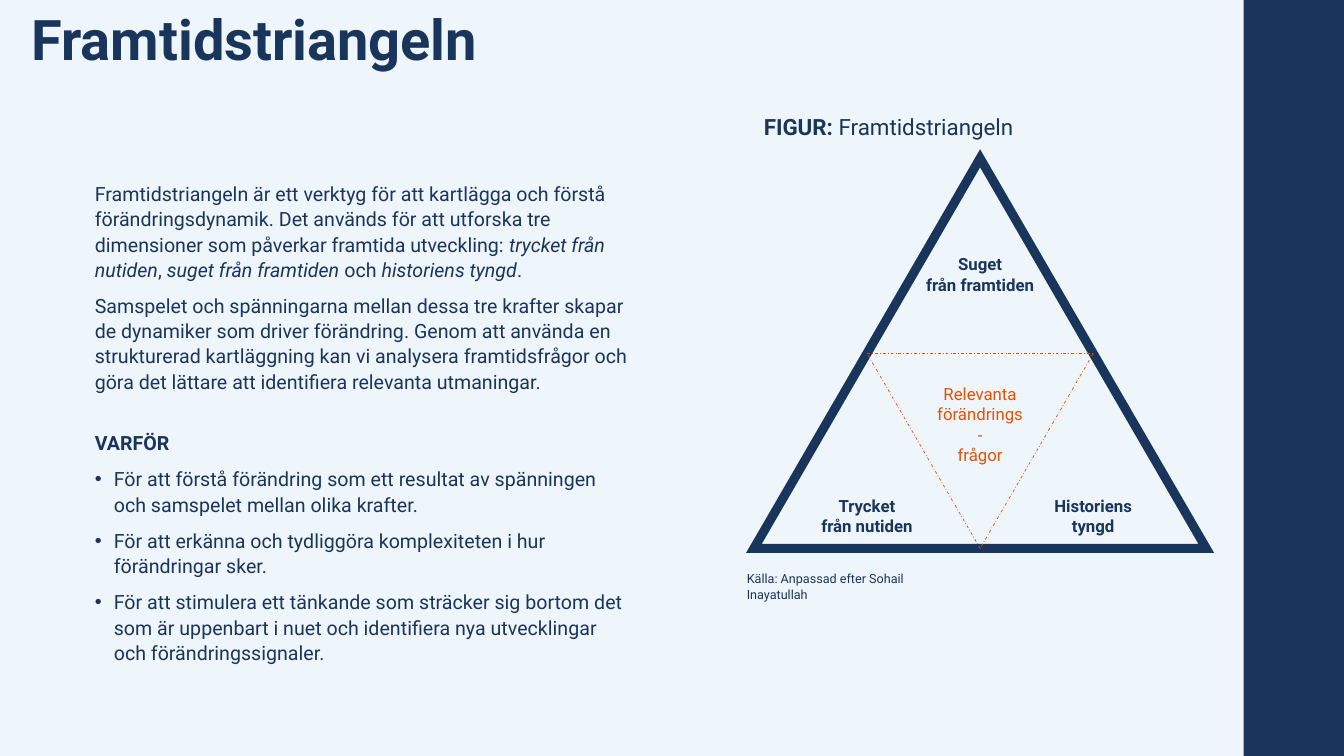
import dataclasses

import lxml.etree
import pptx
import pptx.dml.color
import pptx.enum.dml
import pptx.enum.shapes
import pptx.enum.text
import pptx.oxml.ns
import pptx.util

Cm = pptx.util.Cm
Pt = pptx.util.Pt
SHAPES = pptx.enum.shapes.MSO_SHAPE
ALIGN = pptx.enum.text.PP_ALIGN
qn = pptx.oxml.ns.qn


@dataclasses.dataclass(frozen=True)
class Theme:
    face: str = "Roboto"
    navy: str = "1A355C"
    pale: str = "EEF5FB"
    orange: str = "E35205"
    title: int = 40
    head: int = 16
    body: int = 14
    label: int = 12
    note: int = 9


THEME = Theme()

INTRO = [
    ("Framtidstriangeln är ett verktyg för att kartlägga och förstå förändringsdynamik. "
     "Det används för att utforska tre dimensioner som påverkar framtida utveckling: ", {}),
    ("trycket från nutiden", {"italic": True}),
    (", ", {}),
    ("suget från framtiden ", {"italic": True}),
    ("och ", {}),
    ("historiens tyngd", {"italic": True}),
    (".", {}),
]
FORCES = (
    "Samspelet och spänningarna mellan dessa tre krafter skapar de dynamiker som driver "
    "förändring. Genom att använda en strukturerad kartläggning kan vi analysera "
    "framtidsfrågor och göra det lättare att identifiera relevanta utmaningar."
)
REASONS = [
    "För att förstå förändring som ett resultat av spänningen och samspelet mellan olika krafter.",
    "För att erkänna och tydliggöra komplexiteten i hur förändringar sker.",
    "För att stimulera ett tänkande som sträcker sig bortom det som är uppenbart i nuet "
    "och identifiera nya utvecklingar och förändringssignaler.",
]
LABELS = [
    (0.5, 2.29, 3.3, ["Suget", "från framtiden"], THEME.navy, True),
    (0.25, 8.38, 2.87, ["Trycket", "från nutiden"], THEME.navy, True),
    (0.75, 8.38, 2.59, ["Historiens", "tyngd"], THEME.navy, True),
    (0.5, 5.56, 2.74, ["Relevanta", "förändrings-", "frågor"], THEME.orange, False),
]


def tint(code):
    return pptx.dml.color.RGBColor.from_string(code)


def apply(target, style):
    for key, value in style.items():
        setattr(target, key, value)


def add_box(slide, box, **style):
    frame = slide.shapes.add_textbox(*map(Cm, box)).text_frame
    apply(frame, {"word_wrap": True, **style})
    return frame


def write(para, parts, size, color=THEME.navy, **style):
    apply(para, style)
    for text, form in parts:
        run = para.add_run()
        run.text = text
        apply(run.font, {"name": THEME.face, "size": Pt(size), **form})
        run.font.color.rgb = tint(color)


def next_para(frame, first):
    return frame.paragraphs[0] if first else frame.add_paragraph()


def add_dot(para):
    props = para._p.get_or_add_pPr()
    props.set("marL", str(Cm(0.48)))
    props.set("indent", str(-Cm(0.48)))
    lxml.etree.SubElement(props, qn("a:buFont")).set("typeface", "Arial")
    lxml.etree.SubElement(props, qn("a:buChar")).set("char", "•")


def draw_bar(slide, box):
    bar = slide.shapes.add_shape(SHAPES.RECTANGLE, *map(Cm, box))
    bar.shadow.inherit = False
    bar.fill.solid()
    bar.fill.fore_color.rgb = tint(THEME.navy)
    bar.line.fill.background()


def draw_title(slide, box):
    frame = add_box(slide, box, margin_left=0, margin_top=0, margin_right=0, margin_bottom=0)
    write(frame.paragraphs[0], [("Framtidstriangeln", {"bold": True})],
          THEME.title, line_spacing=0.9)


def draw_body(slide, box):
    frame = add_box(slide, box, margin_left=0, margin_top=Cm(0.89),
                    margin_right=0, margin_bottom=0)
    rows = [
        (INTRO, False, {}),
        ([(FORCES, {})], False, {}),
        ([("VARFÖR", {"bold": True})], False, {"space_before": Pt(18)}),
    ]
    rows += [([(text, {})], True, {}) for text in REASONS]
    for index, (parts, dot, style) in enumerate(rows):
        para = next_para(frame, index == 0)
        if dot:
            add_dot(para)
        write(para, parts, THEME.body, line_spacing=1.07, space_after=Pt(8), **style)


def draw_edge(slide, start, end):
    edge = slide.shapes.add_connector(
        pptx.enum.shapes.MSO_CONNECTOR.STRAIGHT, *map(Cm, start + end))
    apply(edge.line, {"width": Pt(0.5), "dash_style": pptx.enum.dml.MSO_LINE.DASH_DOT})
    edge.line.color.rgb = tint(THEME.orange)
    lxml.etree.SubElement(edge.element.spPr, qn("a:effectLst"))


def draw_figure(slide, box):
    left, top, width, height = box
    head = add_box(slide, (left, top, 6.93, 0.94))
    write(head.paragraphs[0], [("FIGUR: ", {"bold": True}), ("Framtidstriangeln", {})],
          THEME.head)

    peak = top + 1.27
    tall = height - 2.99
    shape = slide.shapes.add_shape(
        SHAPES.ISOSCELES_TRIANGLE, *map(Cm, (left, peak, width, tall)))
    shape.shadow.inherit = False
    shape.fill.solid()
    shape.fill.fore_color.rgb = tint(THEME.pale)
    shape.line.width = Pt(6.5)
    shape.line.color.rgb = tint(THEME.navy)
    join = lxml.etree.SubElement(shape.element.spPr.find(qn("a:ln")), qn("a:miter"))
    join.set("lim", "800000")

    points = [(left + width * across, peak + tall * down)
              for across, down in ((0.25, 0.5), (0.75, 0.5), (0.5, 1))]
    for index, point in enumerate(points):
        draw_edge(slide, point, points[(index + 1) % 3])

    for across, drop, wide, lines, color, bold in LABELS:
        spot = (left + width * across - wide / 2, peak + drop, wide, 1.27)
        frame = add_box(slide, spot)
        for index, text in enumerate(lines):
            write(next_para(frame, index == 0), [(text, {"bold": bold})],
                  THEME.label, color, alignment=ALIGN.CENTER)

    note = add_box(slide, (left - 0.43, top + height - 1.27, 6.05, 0.94))
    write(note.paragraphs[0], [("Källa: Anpassad efter Sohail Inayatullah", {})], THEME.note)


def main():
    deck = pptx.Presentation()
    apply(deck, {"slide_width": Cm(33.87), "slide_height": Cm(19.05)})
    slide = deck.slides.add_slide(deck.slide_layouts[6])
    slide.background.fill.solid()
    slide.background.fill.fore_color.rgb = tint(THEME.pale)
    draw_bar(slide, (31.34, 0, 2.53, 19.05))
    draw_title(slide, (0.79, 0.3, 26.6, 1.6))
    draw_figure(slide, (19, 2.72, 11.4, 12.82))
    draw_body(slide, (2.39, 3.66, 13.56, 13.31))
    deck.save("out.pptx")


if __name__ == "__main__":
    main()
